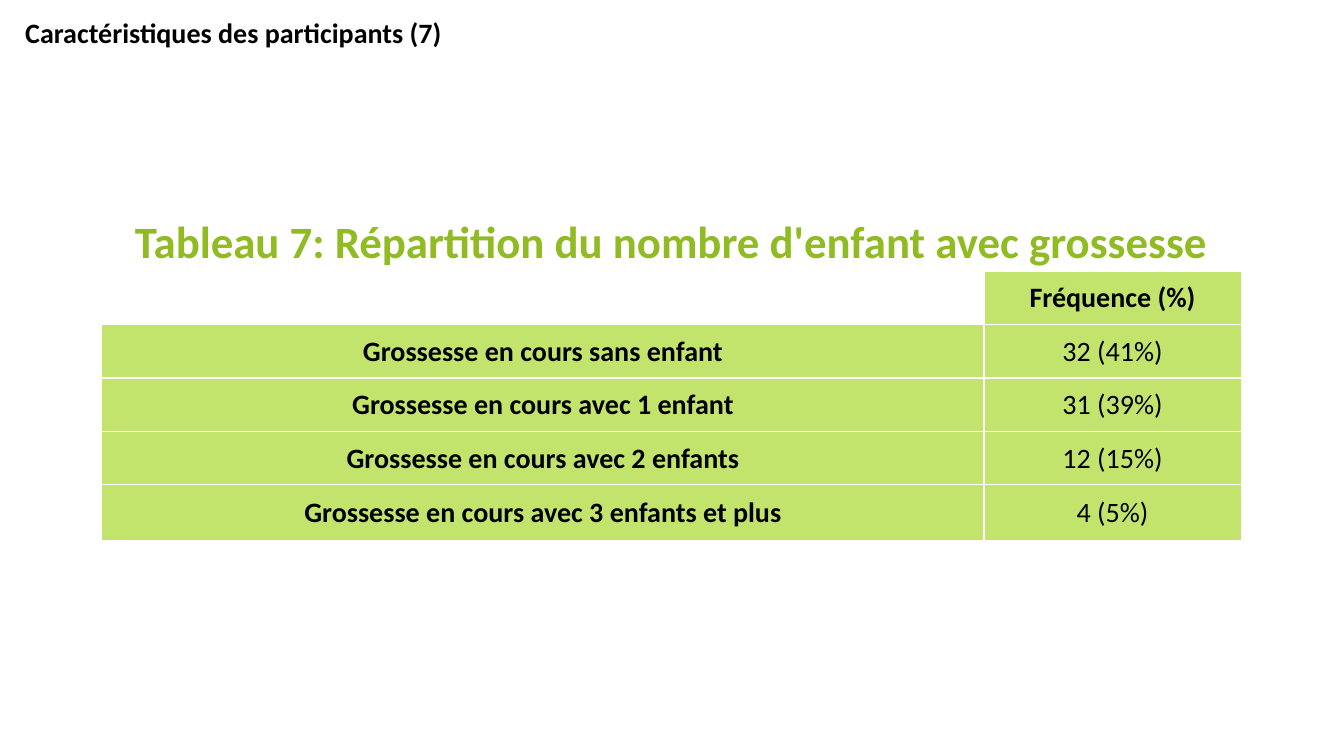
from dataclasses import dataclass
from typing import Optional

import pptx
import pptx.dml.color
import pptx.enum.text
import pptx.oxml
import pptx.oxml.ns
import pptx.slide
import pptx.table
import pptx.text.text
import pptx.util


@dataclass(frozen=True)
class Theme:
    font: str = "Calibri"
    ink: str = "000000"
    caption: str = "90BB23"
    cell: str = "C2E46D"
    border: str = "FFFFFF"
    body_size: int = 20
    caption_size: int = 32
    border_width: int = 1


@dataclass(frozen=True)
class Frequency:
    label: str
    value: str


THEME = Theme()
PP_ALIGN = pptx.enum.text.PP_ALIGN
MSO_ANCHOR = pptx.enum.text.MSO_ANCHOR

HEADING = "Caractéristiques des participants (7)"
CAPTION = "Tableau 7: Répartition du nombre d'enfant avec grossesse"
COLUMN_HEADER = "Fréquence (%)"
FREQUENCIES = [
    Frequency("Grossesse en cours sans enfant", "32 (41%)"),
    Frequency("Grossesse en cours avec 1 enfant", "31 (39%)"),
    Frequency("Grossesse en cours avec 2 enfants", "12 (15%)"),
    Frequency("Grossesse en cours avec 3 enfants et plus", "4 (5%)"),
]
COLUMN_WIDTHS = [8.75, 2.55]
ROW_HEIGHTS = [0.56, 0.53, 0.53, 0.53, 0.53, 0.55]


def write_text(
    frame: pptx.text.text.TextFrame,
    text: str,
    *,
    size: int = THEME.body_size,
    color: str = THEME.ink,
    bold: bool = True,
    align: PP_ALIGN = PP_ALIGN.CENTER,
) -> None:
    paragraph = frame.paragraphs[0]
    paragraph.alignment = align
    run = paragraph.add_run()
    run.text = text
    run.font.name = THEME.font
    run.font.size = pptx.util.Pt(size)
    run.font.bold = bold
    run.font.color.rgb = pptx.dml.color.RGBColor.from_string(color)


def format_cell(cell: pptx.table._Cell, fill: Optional[str] = None) -> None:
    cell.vertical_anchor = MSO_ANCHOR.MIDDLE
    cell.margin_left = cell.margin_right = cell.margin_top = pptx.util.Inches(0.01)
    cell.margin_bottom = 0
    properties = cell._tc.get_or_add_tcPr()
    width = pptx.util.Pt(THEME.border_width)
    for side in ("lnL", "lnR", "lnT", "lnB"):
        properties.append(pptx.oxml.parse_xml(
            f'<a:{side} {pptx.oxml.ns.nsdecls("a")} w="{width}"><a:solidFill>'
            f'<a:srgbClr val="{THEME.border}"/></a:solidFill></a:{side}>'
        ))
    if fill is None:
        cell.fill.background()
    else:
        cell.fill.solid()
        cell.fill.fore_color.rgb = pptx.dml.color.RGBColor.from_string(fill)


def add_heading(slide: pptx.slide.Slide) -> None:
    heading = slide.shapes.title
    heading.left, heading.top = pptx.util.Inches(0.15), pptx.util.Inches(0.1)
    heading.width, heading.height = pptx.util.Inches(4.62), pptx.util.Inches(0.44)
    frame = heading.text_frame
    frame.word_wrap = True
    frame.auto_size = pptx.enum.text.MSO_AUTO_SIZE.NONE
    frame.vertical_anchor = MSO_ANCHOR.TOP
    write_text(frame, HEADING, align=PP_ALIGN.LEFT)


def add_frequency_table(slide: pptx.slide.Slide) -> None:
    table = slide.shapes.add_table(
        len(ROW_HEIGHTS), len(COLUMN_WIDTHS),
        pptx.util.Inches(1.01), pptx.util.Inches(2.13),
        pptx.util.Inches(sum(COLUMN_WIDTHS)), pptx.util.Inches(sum(ROW_HEIGHTS)),
    ).table
    table.first_row = table.horz_banding = False
    for column, width in zip(table.columns, COLUMN_WIDTHS):
        column.width = pptx.util.Inches(width)
    for row, height in zip(table.rows, ROW_HEIGHTS):
        row.height = pptx.util.Inches(height)

    caption = table.cell(0, 0)
    caption.merge(table.cell(0, 1))
    for blank in (caption, table.cell(0, 1), table.cell(1, 0)):
        format_cell(blank)
    write_text(caption.text_frame, CAPTION, size=THEME.caption_size, color=THEME.caption)

    header = table.cell(1, 1)
    format_cell(header, THEME.cell)
    write_text(header.text_frame, COLUMN_HEADER)

    for row_index, frequency in enumerate(FREQUENCIES, start=2):
        for column_index, text in enumerate((frequency.label, frequency.value)):
            cell = table.cell(row_index, column_index)
            format_cell(cell, THEME.cell)
            write_text(cell.text_frame, text, bold=column_index == 0)


def main() -> None:
    presentation = pptx.Presentation()
    presentation.slide_width = pptx.util.Inches(13.33)
    presentation.slide_height = pptx.util.Inches(7.5)
    slide = presentation.slides.add_slide(presentation.slide_layouts[5])
    add_heading(slide)
    add_frequency_table(slide)
    presentation.save("out.pptx")


if __name__ == "__main__":
    main()
